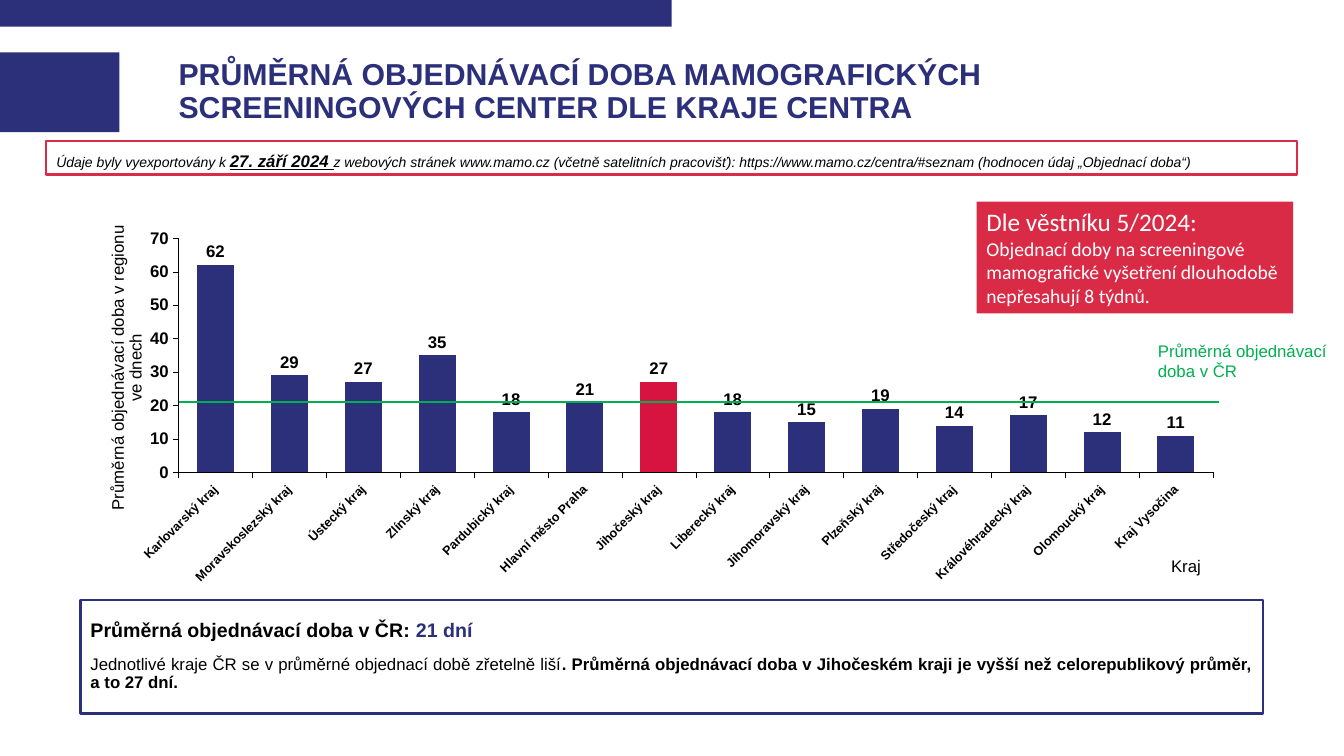
from pptx import Presentation
from pptx.chart.data import CategoryChartData
from pptx.dml.color import RGBColor
from pptx.enum.chart import XL_CHART_TYPE as CT, XL_LABEL_POSITION as LP, XL_TICK_MARK as TM
from pptx.enum.shapes import MSO_CONNECTOR, MSO_SHAPE
from pptx.enum.text import MSO_ANCHOR as ANCHOR, MSO_AUTO_SIZE as FIT, PP_ALIGN as ALIGN
from pptx.oxml import parse_xml
from pptx.oxml.ns import nsdecls, qn
from pptx.util import Cm, Pt

NAVY, RED, GREEN, BLACK, WHITE = "2C2F7A", "DA2B47", "00B050", "000000", "FFFFFF"
JIHOCESKY = 6
WAITING_DAYS = {
    "Karlovarský kraj": 62, "Moravskoslezský kraj": 29, "Ústecký kraj": 27,
    "Zlínský kraj": 35, "Pardubický kraj": 18, "Hlavní město Praha": 21,
    "Jihočeský kraj": 27, "Liberecký kraj": 18, "Jihomoravský kraj": 15,
    "Plzeňský kraj": 19, "Středočeský kraj": 14, "Královéhradecký kraj": 17,
    "Olomoucký kraj": 12, "Kraj Vysočina": 11,
}


def rgb(value):
    """Turn a hex string into a colour."""
    return RGBColor.from_string(value)


def set_font(font, size, color=BLACK, name="Arial", bold=False, italic=False, underline=False):
    """Format a font."""
    font.name, font.size = name, Pt(size)
    font.bold, font.italic, font.underline = bold, italic, underline
    font.color.rgb = rgb(color)


def add_text(p, text, **fmt):
    """Add one formatted run to a paragraph."""
    r = p.add_run()
    r.text = text
    set_font(r.font, **fmt)


def setup_frame(sp, anchor=ANCHOR.TOP, fit=FIT.NONE):
    """Prepare a wrapping text frame and return it."""
    tf = sp.text_frame
    tf.word_wrap, tf.auto_size, tf.vertical_anchor = True, fit, anchor
    return tf


def setup_paragraph(p, align=ALIGN.LEFT, spacing=1.0, before=0):
    """Set alignment and spacing of a paragraph and return it."""
    p.alignment, p.line_spacing, p.space_before = align, spacing, Pt(before)
    return p


def add_box(s, *at, fill=None, line=None):
    """Add a rectangle with an optional fill and outline."""
    sp = s.shapes.add_shape(MSO_SHAPE.RECTANGLE, *map(Cm, at))
    sp.shadow.inherit = False
    if fill:
        sp.fill.solid()
        sp.fill.fore_color.rgb = rgb(fill)
    else:
        sp.fill.background()
    if line:
        sp.line.color.rgb = rgb(line)
        sp.line.width = Pt(1.5)
    else:
        sp.line.fill.background()
    return sp


def add_title(s, text):
    """Place and format the slide title."""
    sp = s.shapes.title
    sp.left, sp.top, sp.width, sp.height = map(Cm, (4.5, 1.32, 27.23, 2.01))
    tf = setup_frame(sp, ANCHOR.MIDDLE)
    tf.margin_left = 0
    p = setup_paragraph(tf.paragraphs[0], spacing=0.9)
    add_text(p, text, size=21.6, color=NAVY, bold=True)


def set_layout(parent, index, target="", **values):
    """Give a chart part a manual layout."""
    for old in parent.findall(qn("c:layout")):
        parent.remove(old)
    modes = "".join(f'<c:{k}Mode val="edge"/>' for k in "xy")
    sizes = "".join(f'<c:{k} val="{v}"/>' for k, v in values.items())
    parent.insert(index, parse_xml(
        f'<c:layout {nsdecls("c")}><c:manualLayout>{target}{modes}{sizes}'
        "</c:manualLayout></c:layout>"))


def format_axis(axis, title, label_size):
    """Format an axis with its title and labels."""
    axis.has_major_gridlines = False
    axis.major_tick_mark, axis.minor_tick_mark = TM.OUTSIDE, TM.NONE
    axis.format.line.color.rgb = rgb(BLACK)
    axis.format.line.width = Pt(0.25)
    set_font(axis.tick_labels.font, label_size, bold=True)
    add_text(axis.axis_title.text_frame.paragraphs[0], title, size=12)


def add_waiting_chart(s):
    """Add the column chart of waiting times by region."""
    data = CategoryChartData(number_format="#,##0")
    data.categories = list(WAITING_DAYS)
    data.add_series("Series 1", list(WAITING_DAYS.values()))
    chart = s.shapes.add_chart(
        CT.COLUMN_CLUSTERED, *map(Cm, (2.03, 5.31, 29.79, 9.8)), data).chart
    chart.has_legend = chart.has_title = False
    set_font(chart.font, 12, bold=True)

    format_axis(chart.category_axis, "Kraj", 9)
    format_axis(chart.value_axis, "Průměrná objednávací doba v\u00a0regionu ve dnech", 12)
    axis = chart.value_axis
    axis.minimum_scale, axis.maximum_scale, axis.major_unit = 0, 70, 10
    axis.tick_labels.number_format = "#,##0"
    axis.tick_labels.number_format_is_linked = False

    plot = chart.plots[0]
    plot.gap_width, plot.overlap, plot.vary_by_categories = 100, 100, False
    bars = plot.series[0]
    for part, color in ((bars, NAVY), (bars.points[JIHOCESKY], "D71440")):
        part.format.fill.solid()
        part.format.fill.fore_color.rgb = rgb(color)
    plot.has_data_labels = True
    labels = plot.data_labels
    labels.show_value, labels.position = True, LP.OUTSIDE_END
    labels.number_format, labels.number_format_is_linked = "#,##0", False
    set_font(labels.font, 12, bold=True)

    find = chart.element.xpath
    find(".//c:catAx/c:txPr/a:bodyPr")[0].set("rot", "-2700000")
    find(".//c:valAx/c:title//a:bodyPr")[0].set("rot", "-5400000")
    set_layout(find(".//c:catAx/c:title")[0], 1, x=0.92, y=0.88)
    set_layout(find(".//c:valAx/c:title")[0], 1, x=0.02, y=0.03)
    set_layout(find(".//c:plotArea")[0], 0, '<c:layoutTarget val="inner"/>',
               x=0.083, y=0.071, w=0.875, h=0.602)


def add_average_line(s):
    """Add the line and label of the national average."""
    sp = s.shapes.add_textbox(*map(Cm, (28.93, 8.46, 4.93, 1.27)))
    p = setup_paragraph(setup_frame(sp, fit=FIT.SHAPE_TO_FIT_TEXT).paragraphs[0])
    add_text(p, "Průměrná objednávací doba v ČR", size=12, color=GREEN)
    line = s.shapes.add_connector(
        MSO_CONNECTOR.STRAIGHT, *map(Cm, (4.5, 10.13, 30.73, 10.13)))
    line.line.color.rgb = rgb(GREEN)
    line.line.width = Pt(1)
    line.element.spPr.append(parse_xml(f'<a:effectLst {nsdecls("a")}/>'))


def add_source_note(s):
    """Add the framed note on the data source."""
    sp = add_box(s, 1.17, 3.56, 31.52, 0.84, line=RED)
    tf = setup_frame(sp, fit=FIT.SHAPE_TO_FIT_TEXT)
    p = setup_paragraph(tf.paragraphs[0], ALIGN.JUSTIFY, 1.24)
    add_text(p, "Údaje byly vyexportovány k ", size=10, italic=True)
    add_text(p, "27. září 2024 ", size=12, bold=True, italic=True, underline=True)
    add_text(p, "z webových stránek www.mamo.cz (včetně satelitních pracovišť): "
             "https://www.mamo.cz/centra/#seznam (hodnocen údaj „Objednací doba“)",
             size=10, italic=True)


def add_bulletin(s):
    """Add the red box with the bulletin rule."""
    sp = add_box(s, 24.61, 5.08, 7.98, 2.82, fill="DA2B46")
    p = setup_paragraph(setup_frame(sp, fit=FIT.SHAPE_TO_FIT_TEXT).paragraphs[0])
    add_text(p, "Dle věstníku 5/2024: ", size=18, color=WHITE, name="Calibri")
    p.add_line_break()
    add_text(p, "Objednací doby na screeningové mamografické vyšetření "
             "dlouhodobě nepřesahují 8 týdnů.", size=14, color=WHITE, name="Calibri")


def add_summary(s):
    """Add the framed summary below the chart."""
    tf = setup_frame(add_box(s, 2.03, 15.11, 29.79, 2.87, line=NAVY), ANCHOR.MIDDLE)
    p = setup_paragraph(tf.paragraphs[0], ALIGN.JUSTIFY, 0.9)
    add_text(p, "Průměrná objednávací doba v ČR: ", size=14, bold=True)
    add_text(p, "21 dní", size=14, color=NAVY, bold=True)
    p = setup_paragraph(tf.add_paragraph(), ALIGN.JUSTIFY, 0.9, 10)
    add_text(p, "Jednotlivé kraje ČR se v průměrné objednací době zřetelně liší", size=12)
    add_text(p, ". Průměrná objednávací doba v Jihočeském kraji je vyšší než "
             "celorepublikový průměr, a to 27 dní.", size=12, bold=True)


def main():
    """Build and save the slide."""
    prs = Presentation()
    prs.slide_width, prs.slide_height = Cm(33.87), Cm(19.05)
    s = prs.slides.add_slide(prs.slide_layouts[5])
    add_box(s, 0, 0, 16.93, 0.67, fill=NAVY)
    add_box(s, 0, 1.32, 3.01, 2.01, fill=NAVY)
    add_title(s, "PRŮMĚRNÁ OBJEDNÁVACÍ DOBA MAMOGRAFICKÝCH SCREENINGOVÝCH CENTER DLE KRAJE CENTRA")
    add_summary(s)
    add_source_note(s)
    add_waiting_chart(s)
    add_bulletin(s)
    add_average_line(s)
    prs.save("out.pptx")


if __name__ == "__main__":
    main()
